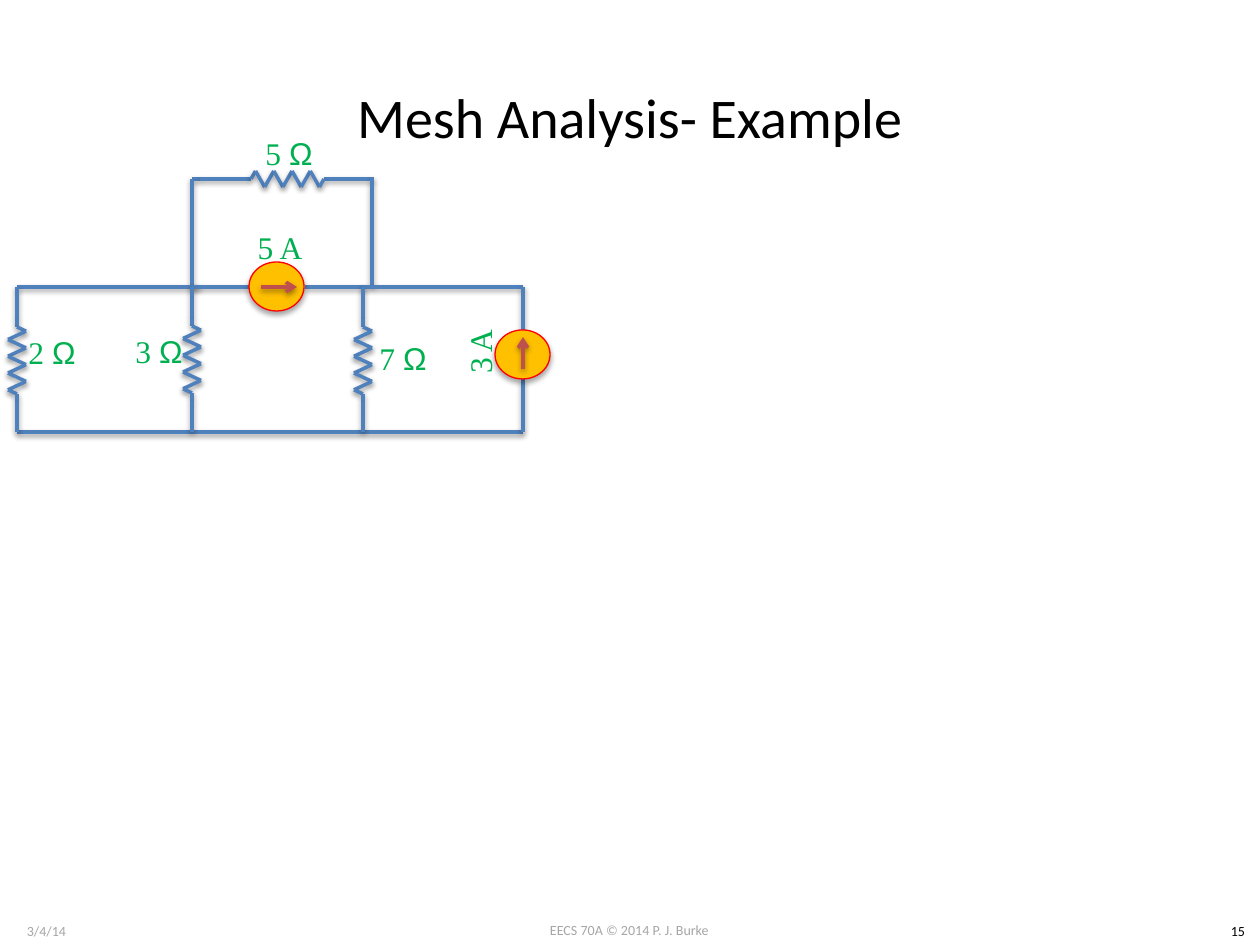
from lxml import etree
from pptx import Presentation, util as u
from pptx.dml.color import RGBColor
from pptx.enum import shapes, text
from pptx.oxml.ns import qn

PX = u.Inches(1) / 126
WIRE, ARROW, LABEL, GREY, BLACK = "4F81BD", "C0504D", "00B050", "A6A6A6", "000000"
SERIF, SANS, BODY = "Times New Roman", "Arial", "Calibri"

# Circuit nodes
LEFT, SECOND, THIRD, RIGHT = 17, 192, 363, 523
LOOP_RIGHT, LOOP, TOP, BOTTOM = 372, 179, 287, 432

# (left, top, width, height), size, colour, rotation, [(words, font), ...]
TEXTS = [
    ((483, 915, 293, 30), 8, GREY, 0, [("EECS 70A © 2014 P. J. Burke", BODY)]),
    ((0, 916, 93, 30), 8, GREY, 0, [("3/4/14", BODY)]),
    ((1216, 916, 44, 30), 8, BLACK, 0, [("15", BODY)]),
    ((63, 38, 1134, 157), 32, BLACK, 0, [("Mesh Analysis- Example", BODY)]),
    ((228, 119, 122, 68), 18, LABEL, 0, [("5 ", SERIF), ("Ω", SANS)]),
    ((-9, 318, 122, 68), 18, LABEL, 0, [("2 ", SERIF), ("Ω", SANS)]),
    ((98, 317, 122, 68), 18, LABEL, 0, [("3 ", SERIF), ("Ω", SANS)]),
    ((342, 324, 122, 68), 18, LABEL, 0, [("7 ", SERIF), ("Ω", SANS)]),
    ((219, 213, 122, 68), 18, LABEL, 0, [("5 A", SERIF)]),
    ((424, 314, 111, 75), 18, LABEL, 270, [("3 A", SERIF)]),
]
WIRES = [
    (SECOND, LOOP, 200, LOOP), (200, LOOP, 251, LOOP), (324, LOOP, 374, LOOP),
    (SECOND, TOP, SECOND, LOOP), (LOOP_RIGHT, TOP, LOOP_RIGHT, LOOP),
    (200, TOP, LEFT, TOP), (249, TOP, SECOND, TOP), (305, TOP, 365, TOP),
    (THIRD, TOP, RIGHT, TOP), (LEFT, BOTTOM, RIGHT, BOTTOM),
    (RIGHT, 330, RIGHT, TOP), (RIGHT, 379, RIGHT, BOTTOM),
]
VERTICAL_RESISTORS = [(LEFT, 327), (SECOND, 326), (THIRD, 327)]
RESISTOR_LENGTH, LEAD, PEAKS = 67, 8, 8
SOURCES = [  # circle left and top, arrow from and to
    ((249, 262), (261, TOP, 297, TOP)),
    ((495, 330), (RIGHT, 369, RIGHT, 337)),
]
SOURCE_SIZE = (55, 49)


def px(*lengths):
    return [u.Emu(round(length * PX)) for length in lengths]


def colour(value):
    return RGBColor.from_string(value)


def assign(target, values):
    for name, value in values.items():
        setattr(target, name, value)


def add_shadow(shape, opacity, distance):
    effects = etree.SubElement(shape._element.spPr, qn("a:effectLst"))
    shadow = etree.SubElement(
        effects, qn("a:outerShdw"), blurRad=str(u.Pt(3.1)), dist=str(u.Pt(distance)),
        dir="5400000", rotWithShape="0")
    black = etree.SubElement(shadow, qn("a:srgbClr"), val=BLACK)
    etree.SubElement(black, qn("a:alpha"), val=str(opacity * 1000))


def add_line(slide, ends, line_colour=WIRE, arrow=False):
    line = slide.shapes.add_connector(shapes.MSO_CONNECTOR.STRAIGHT, *px(*ends))
    line.line.width = u.Pt(2)
    line.line.color.rgb = colour(line_colour)
    if arrow:
        etree.SubElement(line.line._get_or_add_ln(), qn("a:tailEnd"), type="arrow")
    add_shadow(line, 38, 1.6)


def zigzag(length, swing):
    """Points (along, across) of a resistor whose first peak lies at +swing."""
    peaks = [((i + 0.5) * length / PEAKS, swing * (-1) ** i) for i in range(PEAKS)]
    return [(0, 0), *peaks, (length, 0)]


def add_path(slide, points):
    for start, end in zip(points, points[1:]):
        add_line(slide, (*start, *end))


def add_vertical_resistor(slide, x, y):
    end = y + RESISTOR_LENGTH
    body = [(x + across, y + along) for along, across in zigzag(RESISTOR_LENGTH, 9)]
    add_path(slide, [(x, TOP), (x, y - LEAD), *body, (x, end + LEAD), (x, BOTTOM)])


def add_source(slide, corner, arrow):
    circle = slide.shapes.add_shape(
        shapes.MSO_SHAPE.OVAL, *px(*corner, *SOURCE_SIZE))
    circle.fill.solid()
    circle.fill.fore_color.rgb = colour("FFC000")
    circle.line.color.rgb = colour("FF0000")
    circle.line.width = u.Pt(0.75)
    add_shadow(circle, 35, 1.8)
    add_line(slide, arrow, ARROW, arrow=True)


def add_text(slide, box, size, text_colour, rotation, runs):
    shape = slide.shapes.add_textbox(*px(*box))
    shape.rotation = rotation
    assign(shape.text_frame, {
        "word_wrap": True, "vertical_anchor": text.MSO_ANCHOR.MIDDLE})
    paragraph = shape.text_frame.paragraphs[0]
    paragraph.alignment = text.PP_ALIGN.CENTER
    for words, font in runs:
        run = paragraph.add_run()
        run.text = words
        assign(run.font, {"name": font, "size": u.Pt(size)})
        run.font.color.rgb = colour(text_colour)


def main():
    presentation = Presentation()
    assign(presentation, {
        "slide_width": u.Inches(10), "slide_height": u.Inches(7.5)})
    slide = presentation.slides.add_slide(presentation.slide_layouts[6])
    for ends in WIRES:
        add_line(slide, ends)
    add_path(slide, [(251 + along, LOOP + across) for along, across in zigzag(73, -8)])
    for x, y in VERTICAL_RESISTORS:
        add_vertical_resistor(slide, x, y)
    for corner, arrow in SOURCES:
        add_source(slide, corner, arrow)
    for item in TEXTS:
        add_text(slide, *item)
    presentation.save("out.pptx")


if __name__ == "__main__":
    main()
